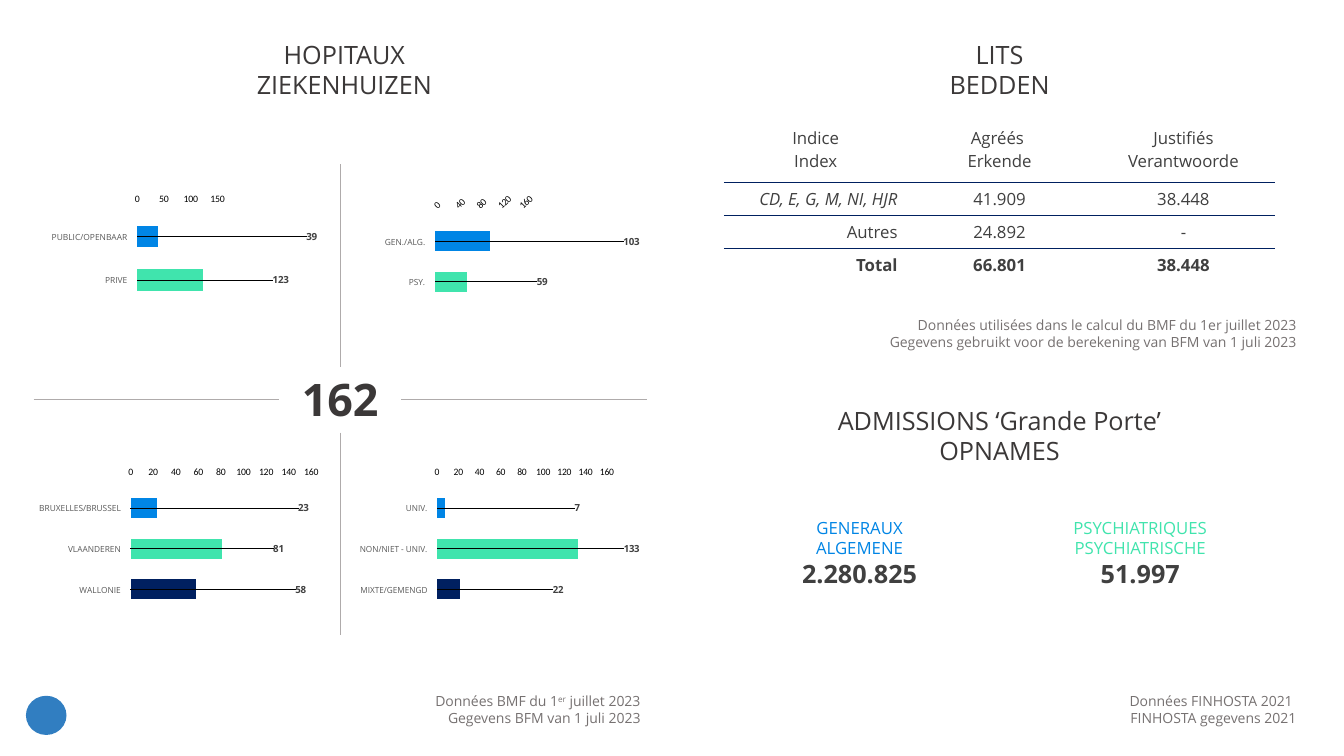
from pptx import Presentation
from pptx.chart.data import CategoryChartData
from pptx.dml.color import RGBColor
from pptx.enum.chart import XL_CHART_TYPE, XL_LABEL_POSITION
from pptx.enum.shapes import MSO_CONNECTOR, MSO_SHAPE
from pptx.enum.text import MSO_ANCHOR, MSO_AUTO_SIZE, PP_ALIGN
from pptx.oxml import parse_xml
from pptx.oxml.ns import nsdecls, qn
from pptx.util import Pt

COLORS = {"title": "3B3838", "text": "404040", "note": "767171", "axis": "595959",
          "black": "000000", "rule": "AFABAB", "blue": "0085E5", "green": "40E4AD",
          "navy": "002060", "logo": "317EC1"}
BAR_COLORS = ("blue", "green", "navy")
FONT = "Open Sans"


def rgb(name):
    return RGBColor.from_string(COLORS[name])


def style(font, size, color, bold=False, name=FONT):
    font.size = Pt(size)
    font.name = name
    font.bold = bold
    font.color.rgb = rgb(color)


def add_run(p, text, size, color, bold=False):
    r = p.add_run()
    r.text = text
    style(r.font, size, color, bold)
    return r


def add_lines(s, box, lines, align=PP_ALIGN.CENTER):
    tf = s.shapes.add_textbox(*map(Pt, box)).text_frame
    tf.word_wrap = True
    tf.auto_size = MSO_AUTO_SIZE.SHAPE_TO_FIT_TEXT
    for i, (text, size, color, bold) in enumerate(lines):
        p = tf.paragraphs[0] if i == 0 else tf.add_paragraph()
        p.alignment = align
        add_run(p, text, size, color, bold)
    return tf


def add_heading(s, box, *texts):
    add_lines(s, box, [(t, 18, "title", False) for t in texts])


def add_note(s, box, *texts):
    return add_lines(s, box, [(t, 10, "note", False) for t in texts], PP_ALIGN.RIGHT)


def add_rule(s, x1, y1, x2, y2):
    line = s.shapes.add_connector(MSO_CONNECTOR.STRAIGHT, Pt(x1), Pt(y1), Pt(x2), Pt(y2))
    line.line.color.rgb = rgb("rule")
    line.line.width = Pt(0.5)
    line._element.spPr.append(parse_xml(f"<a:effectLst {nsdecls('a')}/>"))


def manual_layout(inner="", **values):
    target = '<c:layoutTarget val="inner"/>' if inner else ""
    modes = '<c:xMode val="edge"/><c:yMode val="edge"/>' if inner else ""
    parts = "".join(f'<c:{k} val="{v}"/>' for k, v in values.items())
    return parse_xml(f"<c:layout {nsdecls('c')}><c:manualLayout>{target}{modes}{parts}"
                     "</c:manualLayout></c:layout>")


def add_bars(s, box, plot_box, step, tilt, bars):
    data = CategoryChartData(number_format="#,##0")
    data.categories = [name for name, _, _ in bars]
    data.add_series("Series 1", [value for _, value, _ in bars])
    chart = s.shapes.add_chart(XL_CHART_TYPE.BAR_CLUSTERED, *map(Pt, box), data).chart
    chart.has_legend = False
    chart.has_title = False
    style(chart.font, 7, "black", name="Calibri")

    names, scale = chart.category_axis, chart.value_axis
    names.reverse_order = True
    names.has_major_gridlines = scale.has_major_gridlines = False
    style(names.tick_labels.font, 6, "axis")
    style(scale.tick_labels.font, 7, "black", name="Calibri")
    for axis in (names, scale):
        axis.format.line.fill.background()
    scale.minimum_scale, scale.maximum_scale, scale.major_unit = 0, 162, step
    if tilt:
        body = scale._element.find(qn("c:txPr")).find(qn("a:bodyPr"))
        body.set("rot", str(-tilt * 60000))

    plot = chart.plots[0]
    plot.gap_width = 100
    plot.vary_by_categories = False
    series = plot.series[0]
    for i, (_, _, shift) in enumerate(bars):
        point = series.points[i]
        point.format.fill.solid()
        point.format.fill.fore_color.rgb = rgb(BAR_COLORS[i])
        label = point.data_label
        style(label.font, 7, "text", True)
        label.position = XL_LABEL_POSITION.INSIDE_BASE
    for mark, (_, _, shift) in zip(series._element.iter(qn("c:dLbl")), bars):
        mark.find(qn("c:idx")).addnext(manual_layout(x=shift, y=0))

    area = chart._chartSpace.find(qn("c:chart")).find(qn("c:plotArea"))
    for old in area.findall(qn("c:layout")):
        area.remove(old)
    area.insert(0, manual_layout("inner", **dict(zip("xywh", plot_box))))


def hospitals(s, x, y, w, h):
    mid_x, mid_y = x + w / 2, y + h / 2
    gap_x, gap_y = 43.5, 23.5
    add_lines(s, (mid_x - gap_x, mid_y - gap_y, 2 * gap_x, 46), [("162", 32, "title", True)])
    left, right, top, bottom = x + 4, x + 233, y + 18, y + 208
    charts = [
        ((left, top, 200, 81), (0.35, 0.22, 0.31, 0.77), 50, 0,
         [("PUBLIC/OPENBAAR", 39, 0.59), ("PRIVE", 123, 0.47)]),
        ((right, top, 200, 81), (0.27, 0.28, 0.31, 0.71), 40, 45,
         [("GEN./ALG.", 103, 0.66), ("PSY.", 59, 0.35)]),
        ((left, bottom, 200, 110), (0.32, 0.21, 0.66, 0.79), 20, 0,
         [("BRUXELLES/BRUSSEL", 23, 0.59), ("VLAANDEREN", 81, 0.5), ("WALLONIE", 58, 0.58)]),
        ((right, bottom, 200, 110), (0.26, 0.21, 0.63, 0.79), 20, 0,
         [("UNIV.", 7, 0.49), ("NON/NIET - UNIV.", 133, 0.67), ("MIXTE/GEMENGD", 22, 0.41)]),
    ]
    for chart in charts:
        add_bars(s, *chart)
    add_rule(s, mid_x, y, mid_x, mid_y - gap_y)
    add_rule(s, mid_x, mid_y + gap_y, mid_x, y + h)
    add_rule(s, x, mid_y, mid_x - gap_x, mid_y)
    add_rule(s, mid_x + gap_x, mid_y, x + w, mid_y)


def add_border(cell, side):
    cell._tc.get_or_add_tcPr().insert(0, parse_xml(
        f'<a:{side} {nsdecls("a")} w="12700"><a:solidFill><a:srgbClr val="{COLORS["navy"]}"/>'
        f"</a:solidFill></a:{side}>"))


def beds(s, x, y, w, h):
    rows = [("Indice\nIndex", "Agréés \nErkende", "Justifiés\nVerantwoorde"),
            ("CD, E, G, M, NI, HJR", "41.909", "38.448"),
            ("Autres", "24.892", "-"),
            ("Total", "66.801", "38.448")]
    table = s.shapes.add_table(4, 3, Pt(x), Pt(y), Pt(w), Pt(h)).table
    table.first_row = table.horz_banding = False
    table._tbl.tblPr.find(qn("a:tableStyleId")).text = "{2D5ABB26-0587-4C30-8999-92F81FD0307C}"
    for i, texts in enumerate(rows):
        table.rows[i].height = Pt(h * (0.4 if i == 0 else 0.2))
        for j, text in enumerate(texts):
            cell = table.cell(i, j)
            cell.fill.background()
            cell.vertical_anchor = MSO_ANCHOR.MIDDLE
            tf = cell.text_frame
            for k, line in enumerate(text.split("\n")):
                p = tf.paragraphs[0] if k == 0 else tf.add_paragraph()
                p.alignment = PP_ALIGN.RIGHT if i and j == 0 else PP_ALIGN.CENTER
                r = add_run(p, line, 12, "text", i == 3)
                r.font.italic = (i, j) == (1, 0)
            if i < 2:
                add_border(cell, "lnB")
            if i in (1, 2):
                add_border(cell, "lnT")


def admissions(s, x, y, w, h):
    groups = [(x, 101, "blue", ("GENERAUX", "ALGEMENE"), "2.280.825"),
              (x + w - 114, 114, "green", ("PSYCHIATRIQUES", "PSYCHIATRISCHE"), "51.997")]
    for left, width, color, names, total in groups:
        add_lines(s, (left, y, width, h),
                  [(n, 12, color, False) for n in names] + [(total, 18, "text", True)])


def footer(s, x, y, w, h):
    logo = s.shapes.add_shape(MSO_SHAPE.OVAL, Pt(x), Pt(y + 6), Pt(29), Pt(28))
    logo.shadow.inherit = False
    logo.fill.solid()
    logo.fill.fore_color.rgb = rgb("logo")
    logo.line.fill.background()
    tf = add_note(s, (x + 270, y, 176, h), "Données BMF du 1", "Gegevens BFM van 1 juli 2023")
    p = tf.paragraphs[0]
    add_run(p, "er", 10, "note").font._element.set("baseline", "30000")
    add_run(p, " juillet 2023", 10, "note")
    add_note(s, (x + w - 385, y, 385, h), "Données FINHOSTA 2021 ", "FINHOSTA gegevens 2021")


def main():
    prs = Presentation()
    prs.slide_width, prs.slide_height = Pt(960), Pt(540)
    s = prs.slides.add_slide(prs.slide_layouts[6])
    add_heading(s, (146, 24.5, 200, 51), "HOPITAUX", "ZIEKENHUIZEN")
    hospitals(s, 24, 117.5, 438, 336)
    add_heading(s, (614, 24.5, 200, 51), "LITS", "BEDDEN")
    beds(s, 517, 83, 394, 118)
    add_note(s, (548, 222.5, 385, 32),
             "Données utilisées dans le calcul du BMF du 1er juillet 2023",
             "Gegevens gebruikt voor de berekening van BFM van 1 juli 2023")
    add_heading(s, (582.5, 286, 263, 51), "ADMISSIONS ‘Grande Porte’", "OPNAMES")
    admissions(s, 563.5, 366.5, 308, 58)
    footer(s, 18.5, 491, 914.5, 32)
    prs.save("out.pptx")


if __name__ == "__main__":
    main()
